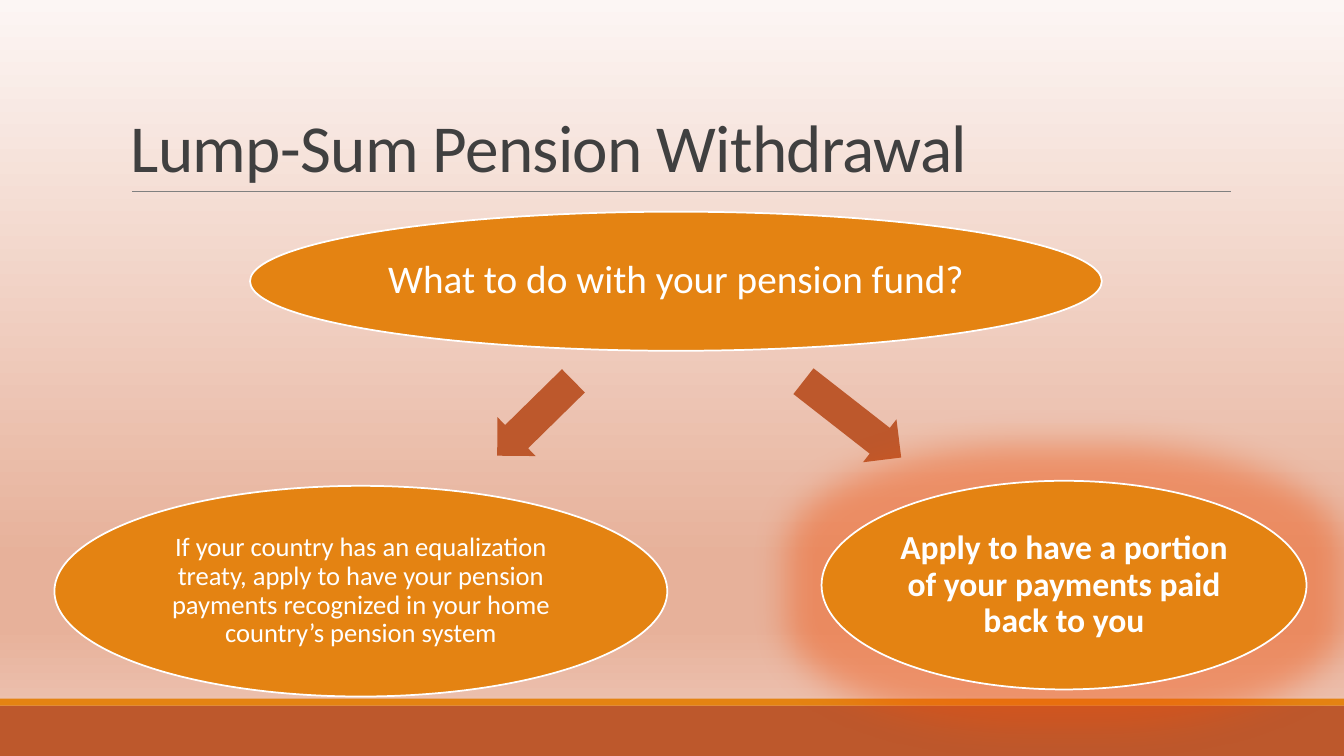
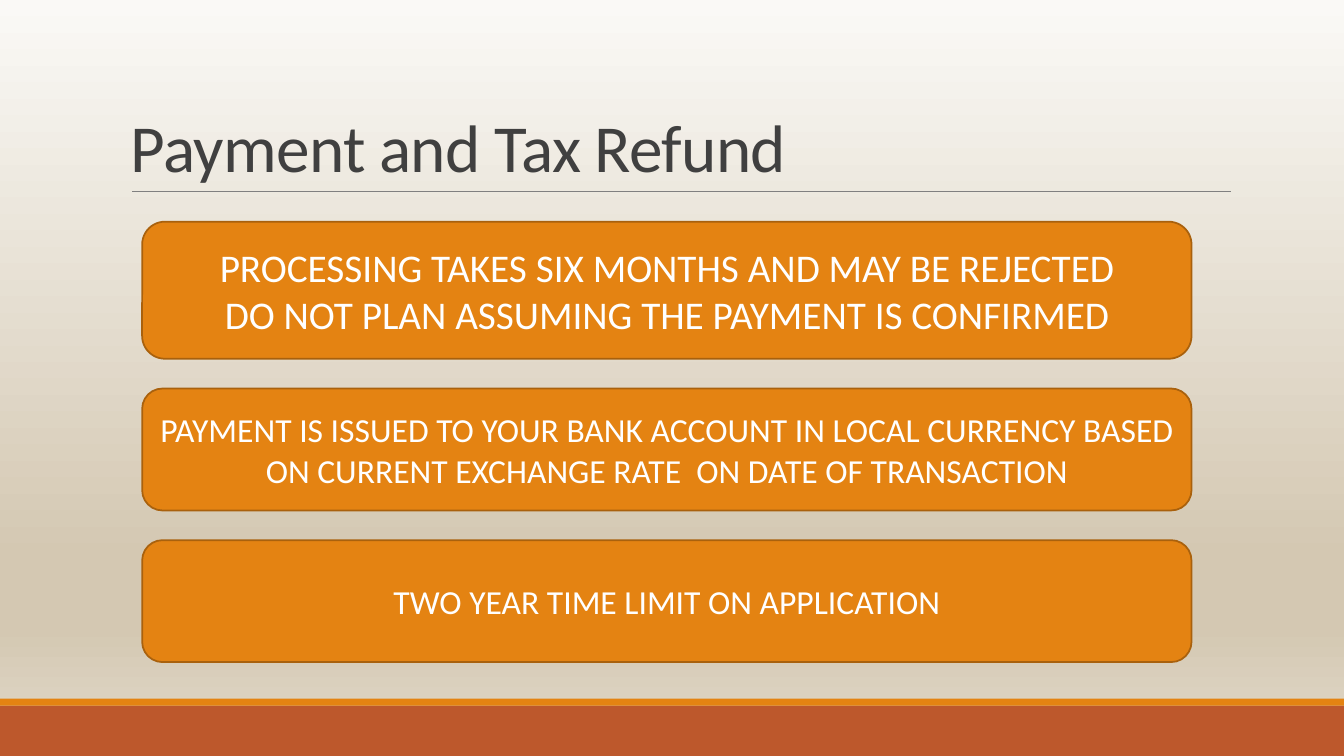
from lxml import etree
from pptx import Presentation
from pptx.dml.color import RGBColor
from pptx.enum.shapes import MSO_CONNECTOR, MSO_SHAPE
from pptx.enum.text import MSO_ANCHOR, PP_ALIGN
from pptx.oxml.ns import qn
from pptx.util import Inches, Pt

RECTANGLE, ROUNDED = MSO_SHAPE.RECTANGLE, MSO_SHAPE.ROUNDED_RECTANGLE
ELLIPSE, ARROW = MSO_SHAPE.OVAL, MSO_SHAPE.RIGHT_ARROW
STRAIGHT = MSO_CONNECTOR.STRAIGHT
MIDDLE, BOTTOM = MSO_ANCHOR.MIDDLE, MSO_ANCHOR.BOTTOM
CENTER, LEFT = PP_ALIGN.CENTER, PP_ALIGN.LEFT

COLORS = {
    "orange": "E48312",
    "rust": "BD582C",
    "outline": "A9610D",
    "glow": "F0500A",
    "rule": "808080",
    "title": "404040",
    "white": "FFFFFF",
}
FONT = "Calibri"
GRADIENT_STOPS = (0, 74, 83, 100)
TITLES = [
    ("Lump-Sum Pension Withdrawal", ("FCF6F4", "E7B19A", "E7B19A", "EFCBBC")),
    ("Payment and Tax Refund", ("FAF9F6", "D4C8B2", "D4C8B2", "E2DACC")),
]

deck = Presentation()
deck.slide_width, deck.slide_height = Inches(13.33), Inches(7.5)
# Every position is a percentage of the slide's width or height
COLUMN, ROW = deck.slide_width / 100, deck.slide_height / 100


def add_block(page, kind, left, top, width, height, fill, outline=None):
    block = page.shapes.add_shape(kind, int(left * COLUMN), int(top * ROW),
                                  int(width * COLUMN), int(height * ROW))
    block.shadow.inherit = False
    block.fill.solid()
    block.fill.fore_color.rgb = RGBColor.from_string(COLORS[fill])
    if outline:
        block.line.color.rgb = RGBColor.from_string(COLORS[outline])
        block.line.width = Pt(1.25)
    else:
        block.line.fill.background()
    return block


def write(box, text, size, color="white", align=CENTER, anchor=MIDDLE,
          spacing=1.0, bold=False, inset=0.1):
    frame = box.text_frame
    frame.word_wrap = True
    frame.vertical_anchor = anchor
    frame.margin_left = frame.margin_right = Inches(inset)
    frame.margin_top = frame.margin_bottom = Inches(min(inset, 0.05))
    frame.text = text
    para = frame.paragraphs[0]
    para.alignment = align
    para.line_spacing = spacing
    for span in para.runs:
        span.font.name = FONT
        span.font.size = Pt(size)
        span.font.bold = bold
        span.font.color.rgb = RGBColor.from_string(COLORS[color])


# Background, bands, rule and title of every slide
pages = []
for title, gradient in TITLES:
    page = deck.slides.add_slide(deck.slide_layouts[6])
    pages.append(page)

    background = page.background.fill
    background.gradient()
    background.gradient_angle = 270
    stops = next(page.element.iter(qn("a:gsLst")))
    for stop in list(stops):
        stops.remove(stop)
    for position, color in zip(GRADIENT_STOPS, gradient):
        stop = etree.SubElement(stops, qn("a:gs"), pos=str(position * 1000))
        etree.SubElement(stop, qn("a:srgbClr"), val=color)

    add_block(page, RECTANGLE, 0, 93.33, 100, 6.67, "rust")
    add_block(page, RECTANGLE, 0, 92.4, 100, 0.93, "orange")

    rule = page.shapes.add_connector(STRAIGHT, int(9.83 * COLUMN), int(25.33 * ROW),
                                     int(91.58 * COLUMN), int(25.33 * ROW))
    rule.line.color.rgb = RGBColor.from_string(COLORS["rule"])
    rule.line.width = Pt(0.5)
    etree.SubElement(rule.element.spPr, qn("a:effectLst"))

    box = page.shapes.add_textbox(int(9 * COLUMN), int(4.13 * ROW),
                                  int(82.5 * COLUMN), int(21.2 * ROW))
    write(box, title, 48, "title", LEFT, BOTTOM, spacing=0.85)
    for span in box.text_frame.paragraphs[0].runs:
        span.font.element.set("spc", "-50") if hasattr(span.font, "element") \
            else span._r.get_or_add_rPr().set("spc", "-50")

choice_page, refund_page = pages

# Question with two arrows leading to the two choices
for left, top, width, angle in [(58.8, 51.87, 9.23, 38), (35.85, 51.73, 7.95, 135.5)]:
    arrow = add_block(choice_page, ARROW, left, top, width, 7.2, "rust")
    arrow.adjustments[0], arrow.adjustments[1] = 0.6, 0.5
    arrow.rotation = angle

choices = [
    ("What to do with your pension fund?", 18.6, 28, 63.38, 18.4, 28, False),
    ("If your country has an equalization treaty, apply to have your pension "
     "payments recognized in your home country’s pension system",
     4.05, 64.27, 45.6, 27.87, 19, False),
    ("Apply to have a portion of your payments paid back to you",
     61.13, 63.6, 36.08, 27.6, 24, True),
]
for text, left, top, width, height, size, chosen in choices:
    ellipse = add_block(choice_page, ELLIPSE, left, top, width, height, "orange", "white")
    write(ellipse, text, size, spacing=0.9, bold=chosen, inset=0.03)
    if chosen:
        effects = ellipse.element.spPr.find(qn("a:effectLst"))
        glow = etree.SubElement(effects, qn("a:glow"), rad=str(Pt(50)))
        tint = etree.SubElement(glow, qn("a:srgbClr"), val=COLORS["glow"])
        etree.SubElement(tint, qn("a:alpha"), val="40000")

# Stacked notes with equal gaps
notes = [
    ("PROCESSING TAKES SIX MONTHS AND MAY BE REJECTED\v"
     "DO NOT PLAN ASSUMING THE PAYMENT IS CONFIRMED", 18.13, 28),
    ("PAYMENT IS ISSUED TO YOUR BANK ACCOUNT IN LOCAL CURRENCY BASED "
     "ON CURRENT EXCHANGE RATE  ON DATE OF TRANSACTION", 16.13, 24),
    ("TWO YEAR TIME LIMIT ON APPLICATION", 16.13, 24),
]
NOTE_GAP = 3.93
top = 29.33
for text, height, size in notes:
    note = add_block(refund_page, ROUNDED, 10.58, top, 78.08, height, "orange", "outline")
    write(note, text, size)
    top += height + NOTE_GAP

deck.save("out.pptx")
